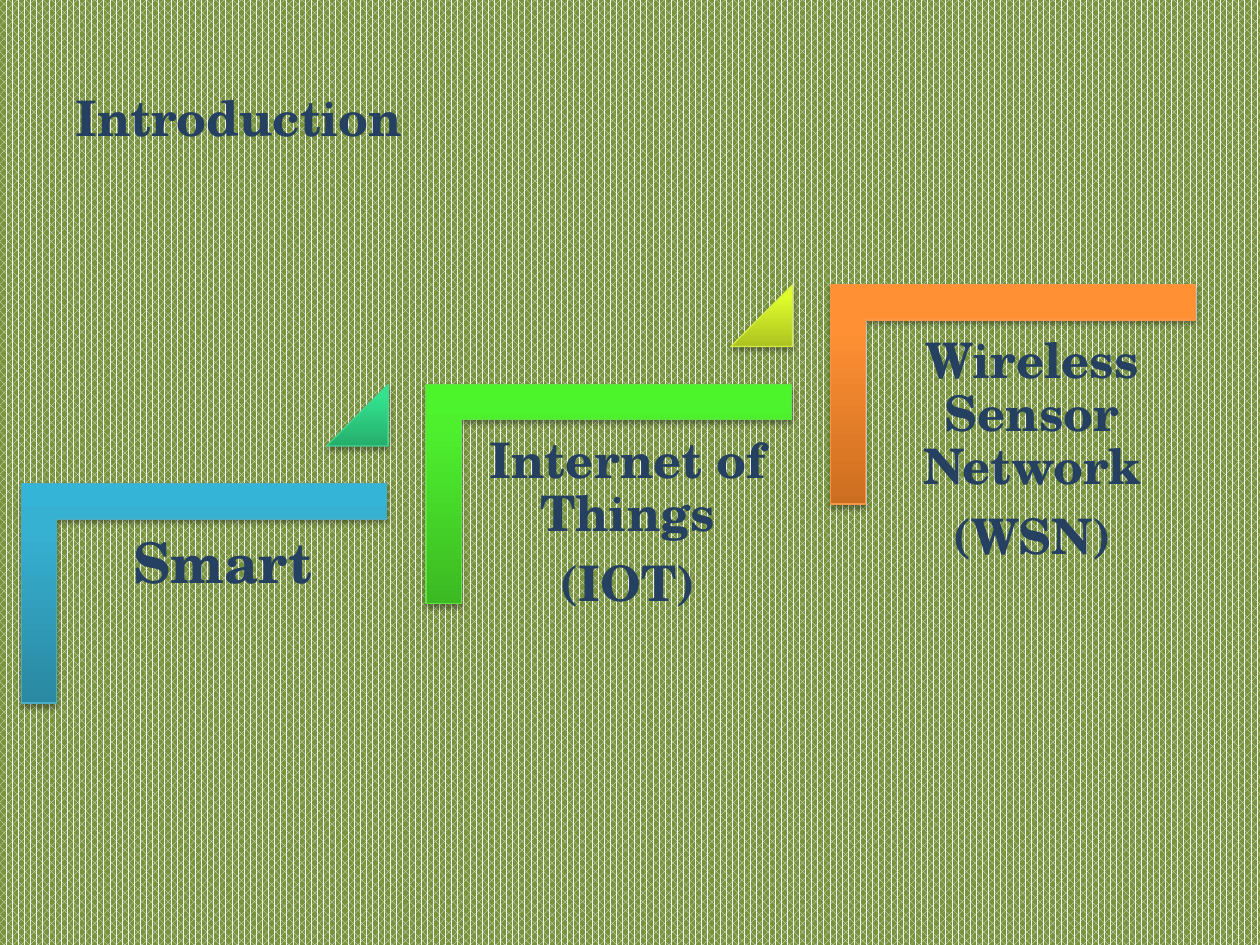
from copy import deepcopy
from lxml import etree
from pptx import Presentation
from pptx.dml.color import RGBColor
from pptx.enum.dml import MSO_PATTERN
from pptx.enum.shapes import MSO_SHAPE
from pptx.enum.text import MSO_ANCHOR, PP_ALIGN
from pptx.oxml.ns import qn
from pptx.util import Inches, Pt

CORNER, WEDGE = MSO_SHAPE.CORNER, MSO_SHAPE.ISOSCELES_TRIANGLE
LEFT, CENTER = PP_ALIGN.LEFT, PP_ALIGN.CENTER
MIDDLE, TOP = MSO_ANCHOR.MIDDLE, MSO_ANCHOR.TOP
FONT = "TeX Gyre Schola"
NAVY = RGBColor(0x25, 0x40, 0x61)
OLIVE = RGBColor(0x77, 0x93, 0x3C)
PALE = RGBColor(0xF2, 0xF2, 0xF2)

# Each palette: dark, middle and light gradient stops, then the outline
BLUE, TEAL, GREEN, LIME, ORANGE = [
    [RGBColor.from_string(code) for code in row.split()]
    for row in (
        "2A88A2 37B1D2 34B4D6 4BACC6",
        "26AE6D 32E28D 2EE68E 48D491",
        "3CB923 4EF02E 4CF52A 60E146",
        "ACC321 DFFD2B E1FF2B D5EC46",
        "CC6E20 FF9034 FF9136 F79646",
    )
]

deck = Presentation()
deck.slide_width, deck.slide_height = Inches(10), Inches(7.5)
UNIT = deck.slide_width / 100  # one percent of the slide's width
COL, ROW = 32.1, 7.9  # one stair step across and up

slide = deck.slides.add_slide(deck.slide_layouts[6])
back = slide.background.fill
back.patterned()
back.pattern = MSO_PATTERN.PERCENT_70
back.fore_color.rgb = PALE
back.back_color.rgb = OLIVE


def add_text(box, lines, size, align, anchor, inset=None):
    frame = slide.shapes.add_textbox(*[round(v * UNIT) for v in box]).text_frame
    frame.word_wrap = True
    frame.vertical_anchor = anchor
    if inset:
        frame.margin_left = frame.margin_right = round(inset * UNIT)
        frame.margin_top = frame.margin_bottom = round(inset * UNIT)
    for i, line in enumerate(lines):
        para = frame.add_paragraph() if i else frame.paragraphs[0]
        para.alignment = align
        if align == CENTER:
            para.line_spacing = 0.9
            para.space_after = Pt(0.35 * size)
        run = para.add_run()
        run.text = line
        run.font.name, run.font.size, run.font.bold = FONT, Pt(size), True
        run.font.color.rgb = NAVY


def add_form(kind, box, tones, adjust, turn=0):
    """Add a shape with a bottom-to-top gradient and a soft shadow."""
    form = slide.shapes.add_shape(kind, *[round(v * UNIT) for v in box])
    form.rotation = turn
    for i, value in enumerate(adjust):
        form.adjustments[i] = value
    form.fill.gradient()
    form.fill.gradient_angle = 90
    props = form._element.spPr
    grad = props.find(qn("a:gradFill"))
    grad.set("rotWithShape", "0")
    stops = grad.find(qn("a:gsLst"))
    stops.insert(1, deepcopy(stops[0]))
    for stop, place, tone in zip(form.fill.gradient_stops, (0, 0.8, 1), tones):
        stop.position = place
        stop.color.rgb = tone
    form.line.color.rgb = tones[3]
    form.line.width = Pt(0.75)
    form.shadow.inherit = False
    shade = etree.SubElement(
        props.find(qn("a:effectLst")), qn("a:outerShdw"),
        blurRad=str(Pt(3.1)), dist=str(Pt(1.8)), dir="5400000", rotWithShape="0")
    black = etree.SubElement(shade, qn("a:srgbClr"), val="000000")
    etree.SubElement(black, qn("a:alpha"), val="35000")


add_text((5, 3, 90, 12.5), ["Introduction"], 28, LEFT, MIDDLE)

steps = [
    (["Smart"], 32, BLUE, TEAL),
    (["Internet of Things", "(IOT)"], 28, GREEN, LIME),
    (["Wireless Sensor Network", "(WSN)"], 28, ORANGE, None),
]
for i, (lines, size, tones, accent) in enumerate(steps):
    x, y = i * COL, -i * ROW
    add_form(CORNER, (7.5 + x, 32.6 + y, 17.4, 29), tones, (0.161, 0.161), 90)
    add_text((4.6 + x, 41.3 + y, 26.2, 23), lines, size, CENTER, TOP, 1.2)
    if accent:
        add_form(WEDGE, (25.9 + x, 30.5 + y, 4.9, 4.9), accent, (1,))

deck.save("out.pptx")
